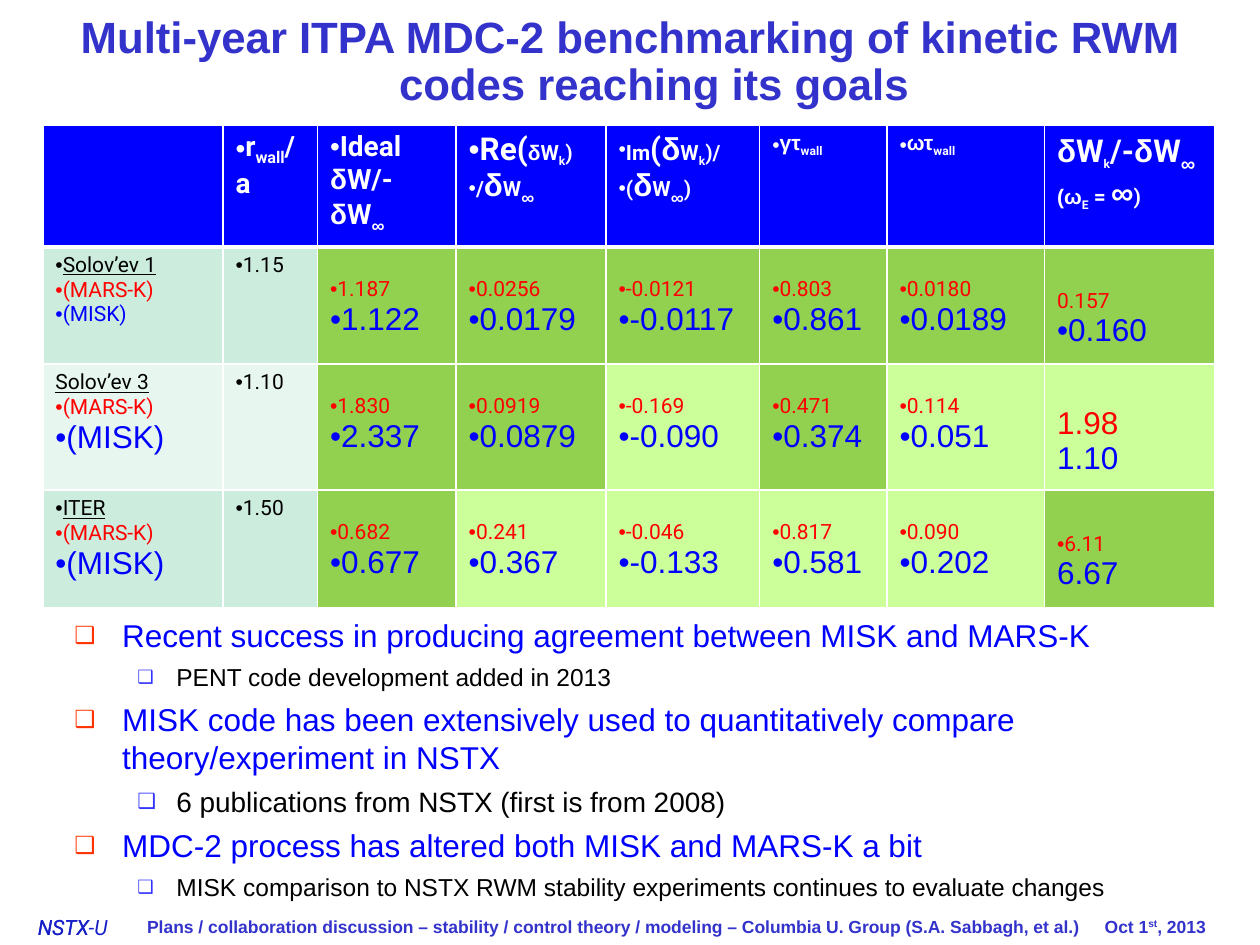
from dataclasses import dataclass

from lxml import etree
from pptx import Presentation
from pptx import util as u
from pptx.dml.color import RGBColor
from pptx.enum import text
from pptx.oxml import ns


@dataclass(frozen=True)
class Theme:
    sans: str = "Arial"
    label: str = "Roboto"
    title: str = "3333CC"
    logo: str = "171FC7"
    blue: str = "0000FF"
    red: str = "FF0000"
    black: str = "000000"
    white: str = "FFFFFF"
    agree: str = "92D050"
    differ: str = "CCFF99"
    bullets: tuple = ("FF3300", "3333FF")
    title_size: int = 25
    large: int = 18
    head: int = 16
    small: int = 12
    footer: int = 10


T = Theme()


@dataclass(frozen=True)
class Span:
    words: str
    size: float = T.small
    font: str = T.label
    color: str = T.white
    bold: bool = False
    italic: bool = False
    underline: bool = False
    base: int = 0


@dataclass(frozen=True)
class Line:
    spans: list
    bullet: bool = True


@dataclass(frozen=True)
class Value:
    mars: str
    misk: str
    agrees: bool
    mars_bullet: bool = True
    misk_bullet: bool = True
    mars_large: bool = False
    top: float = 0.24


@dataclass(frozen=True)
class Case:
    name: str
    wall: str
    fill: str
    values: list
    name_bullet: bool = True
    misk_large: bool = True


# Header pieces: bold white, Greek in the sans face
def head(words: str, size: float = T.small, base: int = 0) -> Span:
    greek = any(c in "δγτω∞" for c in words)
    return Span(words, size, T.sans if greek else T.label, bold=True, base=base)


def low(words: str, size: float = T.small) -> Span:
    return head(words, size, -25)


BIG_DELTA = [head("δ", T.large), head("W"), low("∞", T.large)]
HEADERS = [
    [],
    [Line([head("r", T.head), low("wall", T.head), head("/a", T.head)])],
    [Line([head("Ideal", T.head)]),
     Line([head("δ", T.head), head("W/-", T.head), head("δ", T.head),
           head("W", T.head), low("∞", T.large)], False)],
    [Line([head("Re(", T.large), head("δ"), head("W"), low("k"), head(")")]),
     Line([head("/"), *BIG_DELTA])],
    [Line([head("Im"), head("(", T.large), head("δ", T.large), head("W"),
           low("k"), head(")/")]),
     Line([head("("), *BIG_DELTA, head(")")])],
    [Line([head("γτ"), low("wall")])],
    [Line([head("ωτ"), low("wall")])],
    [Line([head("δ", T.large), head("W", T.large), low("k"), head("/-", T.large),
           head("δ", T.large), head("W", T.large), low("∞", 20)], False),
     Line([head("(ω"), low("E"), head(" = "), head("∞", T.large), head(")")], False)],
]
CASES = [
    Case("Solov’ev 1", "1.15", "CCECDE", [
        Value("1.187", "1.122", True), Value("0.0256", "0.0179", True),
        Value("-0.0121", "-0.0117", True), Value("0.803", "0.861", True),
        Value("0.0180", "0.0189", True),
        Value("0.157", "0.160", True, mars_bullet=False, top=0.33)], misk_large=False),
    Case("Solov’ev 3", "1.10", "E7F6EF", [
        Value("1.830", "2.337", True), Value("0.0919", "0.0879", True),
        Value("-0.169", "-0.090", False), Value("0.471", "0.374", True),
        Value("0.114", "0.051", False),
        Value("1.98", "1.10", False, False, False, True, 0.33)], name_bullet=False),
    Case("ITER", "1.50", "CCECDE", [
        Value("0.682", "0.677", True), Value("0.241", "0.367", False),
        Value("-0.046", "-0.133", False), Value("0.817", "0.581", False),
        Value("0.090", "0.202", False),
        Value("6.11", "6.67", True, misk_bullet=False, top=0.33)]),
]
# Level, size, words
POINTS = [
    (0, 18, "Recent success in producing agreement between MISK and MARS-K"),
    (1, 14, "PENT code development added in 2013"),
    (0, 18, "MISK code has been extensively used to quantitatively compare "
            "theory/experiment in NSTX"),
    (1, 16, "6 publications from NSTX (first is from 2008)"),
    (0, 18, "MDC-2 process has altered both MISK and MARS-K a bit"),
    (1, 14, "MISK comparison to NSTX RWM stability experiments continues to "
            "evaluate changes"),
]
COLUMNS = [1.43, 0.75, 1.1, 1.19, 1.22, 1.01, 1.25, 1.35]
ROWS = [0.97, 0.93, 1.0, 0.93]


def add_span(para, item: Span) -> None:
    span = para.add_run()
    span.text = item.words
    font = span.font
    font.size, font.name = u.Pt(item.size), item.font
    font.bold, font.italic, font.underline = item.bold, item.italic, item.underline
    font.color.rgb = RGBColor.from_string(item.color)
    if item.base:
        font._element.set("baseline", str(item.base * 1000))


def set_indent(para, left: float, first: float):
    properties = para._p.get_or_add_pPr()
    properties.set("marL", str(u.Inches(left)))
    properties.set("indent", str(u.Inches(first)))
    return properties


def set_bullet(para, mark: str, left: float = 0, first: float = 0,
               color: str = "", face: str = "") -> None:
    properties = set_indent(para, left, first)
    if color:
        holder = etree.SubElement(properties, ns.qn("a:buClr"))
        etree.SubElement(holder, ns.qn("a:srgbClr"), val=color)
        etree.SubElement(properties, ns.qn("a:buSzPct"), val="75000")
    if face:
        etree.SubElement(properties, ns.qn("a:buFont"), typeface=face)
    etree.SubElement(properties, ns.qn("a:buChar"), char=mark)


def fill_cell(cell, lines: list, color: str, top: float = 0.05, rule: float = 1) -> None:
    cell.margin_top = u.Inches(top)
    for index, side in enumerate(("L", "R", "T", "B")):
        width = rule if side == "B" else 1
        border = etree.Element(ns.qn(f"a:ln{side}"), w=str(u.Pt(width)))
        paint = etree.SubElement(border, ns.qn("a:solidFill"))
        etree.SubElement(paint, ns.qn("a:srgbClr"), val=T.white)
        cell._tc.get_or_add_tcPr().insert(index, border)
    cell.fill.solid()
    cell.fill.fore_color.rgb = RGBColor.from_string(color)
    for index, line in enumerate(lines):
        frame = cell.text_frame
        para = frame.add_paragraph() if index else frame.paragraphs[0]
        if line.bullet:
            set_bullet(para, "•", face=T.sans)
        for item in line.spans:
            add_span(para, item)


def misk(words: str, large: bool = True) -> Span:
    return Span(words, T.large if large else T.small, T.sans if large else T.label, T.blue)


def mars(words: str, large: bool = False) -> Span:
    return Span(words, T.large if large else T.small, T.sans if large else T.label, T.red)


def add_results(page) -> None:
    table = page.shapes.add_table(len(ROWS), len(COLUMNS), u.Inches(0.34), u.Inches(0.99),
                                  u.Inches(sum(COLUMNS)), u.Inches(sum(ROWS))).table
    table.horz_banding = False
    for column, width in zip(table.columns, COLUMNS):
        column.width = u.Inches(width)
    for row, height in zip(table.rows, ROWS):
        row.height = u.Inches(height)
    for column, lines in enumerate(HEADERS):
        fill_cell(table.cell(0, column), lines, T.blue, rule=3)
    for row, case in enumerate(CASES, 1):
        name = Span(case.name, color=T.black, underline=True)
        fill_cell(table.cell(row, 0), [Line([name], case.name_bullet), Line([mars("(MARS-K)")]),
                                       Line([misk("(MISK)", case.misk_large)])], case.fill)
        fill_cell(table.cell(row, 1), [Line([Span(case.wall, color=T.black)])], case.fill)
        for column, value in enumerate(case.values, 2):
            lines = [Line([mars(value.mars, value.mars_large)], value.mars_bullet),
                     Line([misk(value.misk)], value.misk_bullet)]
            fill_cell(table.cell(row, column), lines,
                      T.agree if value.agrees else T.differ, value.top)


def place(shape, left: float, top: float, width: float, height: float):
    shape.left, shape.top = u.Inches(left), u.Inches(top)
    shape.width, shape.height = u.Inches(width), u.Inches(height)
    shape.text_frame.word_wrap = True
    shape.text_frame.auto_size = text.MSO_AUTO_SIZE.NONE
    return shape.text_frame


def add_footer(page, area: tuple, align, spans: list) -> None:
    frame = place(page.shapes.add_textbox(0, 0, 0, 0), *area)
    frame.margin_left = frame.margin_right = frame.margin_top = frame.margin_bottom = 0
    frame.vertical_anchor = text.MSO_ANCHOR.MIDDLE
    frame.paragraphs[0].alignment = align
    for item in spans:
        add_span(frame.paragraphs[0], item)


def main() -> None:
    deck = Presentation()
    deck.slide_width, deck.slide_height = u.Inches(10), u.Inches(7.5)
    page = deck.slides.add_slide(deck.slide_layouts[1])

    # Title
    frame = place(page.shapes.title, 0, 0, 10, 1)
    frame.vertical_anchor = text.MSO_ANCHOR.MIDDLE
    para = frame.paragraphs[0]
    set_indent(para, 0.38, -0.38)
    para.alignment, para.line_spacing = text.PP_ALIGN.CENTER, 0.9
    add_span(para, Span("Multi-year ITPA MDC-2 benchmarking of kinetic RWM codes "
                        "reaching its goals", T.title_size, T.sans, T.title, bold=True))

    # Benchmark table
    add_results(page)

    # Findings
    frame = place(page.placeholders[1], 0.49, 4.84, 9.51, 2.33)
    for index, (level, size, words) in enumerate(POINTS):
        para = frame.add_paragraph() if index else frame.paragraphs[0]
        para.level = level
        set_bullet(para, "❑", (0.38, 0.81)[level], (-0.38, -0.31)[level], T.bullets[level])
        para.space_before = u.Pt(4.8 if index else 0)
        add_span(para, Span(words, size, T.sans, (T.blue, T.black)[level]))

    # Footer, with the short mark struck over the long one
    note = dict(size=T.footer, font=T.sans, color=T.title, bold=True)
    for words, width in (("NSTX", 0.59), ("NSTX-U", 0.87)):
        add_footer(page, (0.3, 7.26, width, 0.2), text.PP_ALIGN.LEFT,
                   [Span(words, color=T.logo, italic=True)])
    add_footer(page, (0.95, 7.2, 7.83, 0.3), text.PP_ALIGN.CENTER,
               [Span("Plans / collaboration discussion – stability / control theory / modeling"
                     " – Columbia U. Group (S.A. Sabbagh, et al.)", **note)])
    add_footer(page, (7.4, 7.2, 2.17, 0.3), text.PP_ALIGN.RIGHT,
               [Span("Oct 1", **note), Span("st", base=30, **note), Span(", 2013", **note)])
    deck.save("out.pptx")


if __name__ == "__main__":
    main()
